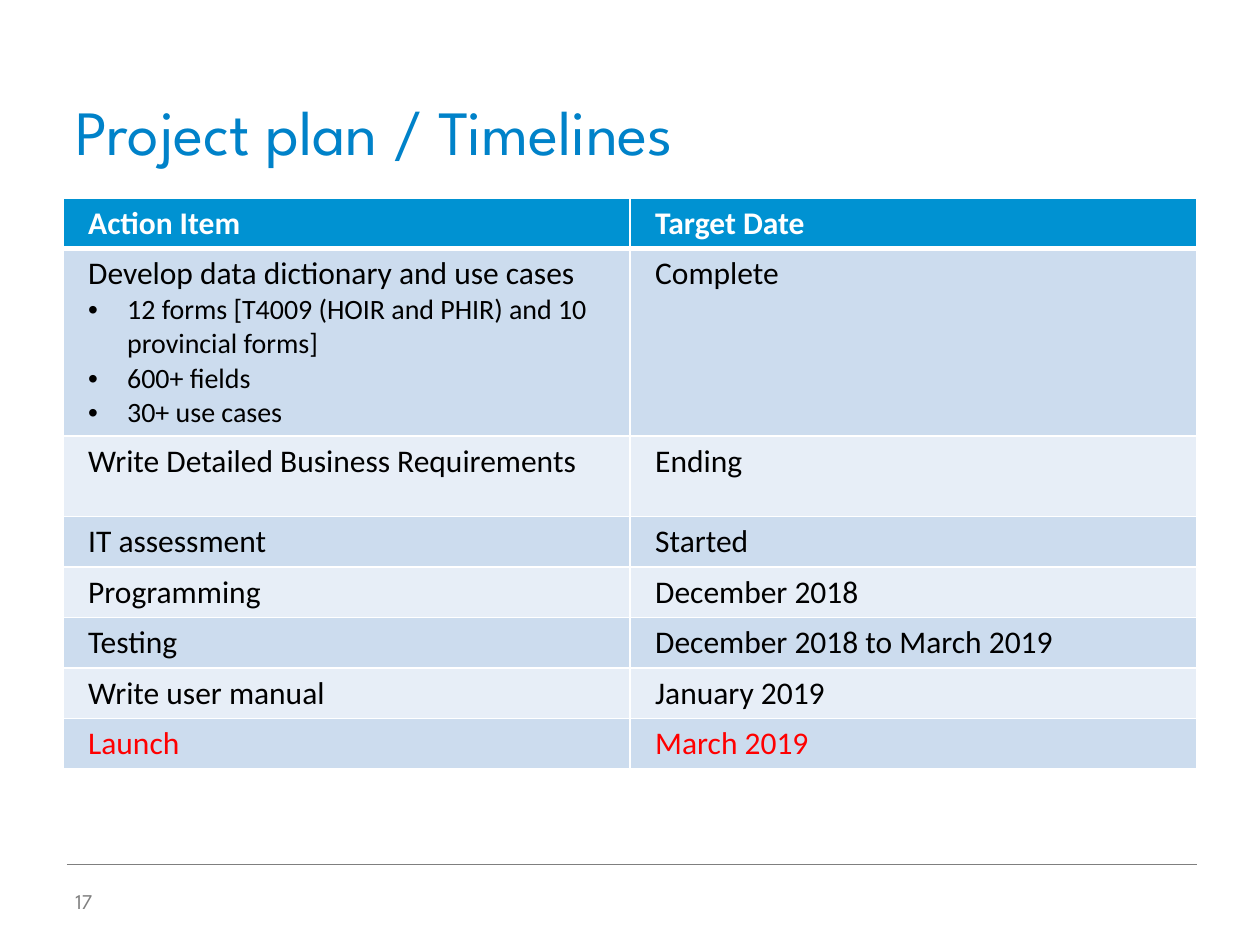
from dataclasses import dataclass

import pptx
import pptx.dml.color
import pptx.enum.shapes
import pptx.enum.text
import pptx.oxml.ns
import pptx.util
from lxml import etree

Inches = pptx.util.Inches
Pt = pptx.util.Pt
qn = pptx.oxml.ns.qn
Anchor = pptx.enum.text.MSO_ANCHOR

HEADING_FONT = "League Spartan"
BODY_FONT = "Calibri"
HEADER_FILL = "0092D2"
BAND_FILLS = ("CCDCEE", "E7EEF7")


@dataclass
class Action:
    item: str
    date: str
    height: float = 0.4
    bullets: tuple[str, ...] = ()
    color: str = "000000"


ACTIONS = [
    Action("Develop data dictionary and use cases", "Complete", 1.49,
           ("12 forms [T4009 (HOIR and PHIR) and 10 provincial forms]",
            "600+ fields", "30+ use cases")),
    Action("Write Detailed Business Requirements", "Ending", 0.64),
    Action("IT assessment", "Started"),
    Action("Programming", "December 2018"),
    Action("Testing", "December 2018 to March 2019"),
    Action("Write user manual", "January 2019"),
    Action("Launch", "March 2019", color="FF0000"),
]


def rgb(value: str) -> pptx.dml.color.RGBColor:
    return pptx.dml.color.RGBColor.from_string(value)


def add_run(p, text: str, font: str, size: float, color: str, bold: bool = False) -> None:
    r = p.add_run()
    r.text = text
    r.font.name = font
    r.font.size = Pt(size)
    r.font.bold = bold
    r.font.color.rgb = rgb(color)


def add_text(s, box: tuple[float, ...], text: str, size: float, color: str, anchor) -> None:
    tf = s.shapes.add_textbox(*map(Inches, box)).text_frame
    tf.word_wrap = True
    tf.vertical_anchor = anchor
    add_run(tf.paragraphs[0], text, HEADING_FONT, size, color)


def add_rule(s, left: float, right: float, top: float) -> None:
    sp = s.shapes.add_connector(pptx.enum.shapes.MSO_CONNECTOR.STRAIGHT,
                                Inches(left), Inches(top), Inches(right), Inches(top))
    sp.line.color.rgb = rgb("7F7F7F")
    sp.line.width = Pt(0.25)
    etree.SubElement(sp._element.spPr, qn("a:effectLst"))


def set_bullet(p) -> None:
    pPr = p._p.get_or_add_pPr()
    pPr.set("marL", str(Inches(0.31)))
    pPr.set("indent", str(-Inches(0.31)))
    etree.SubElement(pPr, qn("a:buFont"), typeface="Arial")
    etree.SubElement(pPr, qn("a:buChar"), char="•")


def style_cell(cell, fill: str, top: float = 1, bottom: float = 1) -> None:
    cell.margin_left = cell.margin_right = Inches(0.2)
    cell.margin_top = cell.margin_bottom = Inches(0.05)
    tcPr = cell._tc.get_or_add_tcPr()
    for side, width in (("L", 1), ("R", 1), ("T", top), ("B", bottom)):
        ln = etree.SubElement(tcPr, qn(f"a:ln{side}"), w=str(Pt(width)))
        solid = etree.SubElement(ln, qn("a:solidFill"))
        etree.SubElement(solid, qn("a:srgbClr"), val="FFFFFF")
    cell.fill.solid()
    cell.fill.fore_color.rgb = rgb(fill)


def add_plan(s, actions: list[Action]) -> None:
    height = 0.4 + sum(a.height for a in actions)
    table = s.shapes.add_table(len(actions) + 1, 2, Inches(0.5), Inches(1.57),
                               Inches(9), Inches(height)).table
    table.rows[0].height = Inches(0.4)
    for cell, heading in zip(table.rows[0].cells, ("Action Item", "Target Date")):
        style_cell(cell, HEADER_FILL, bottom=3)
        add_run(cell.text_frame.paragraphs[0], heading, BODY_FONT, 18, "FFFFFF", True)
    for i, action in enumerate(actions):
        row = table.rows[i + 1]
        row.height = Inches(action.height)
        for cell, text in zip(row.cells, (action.item, action.date)):
            style_cell(cell, BAND_FILLS[i % 2], top=1 if i else 3)
            add_run(cell.text_frame.paragraphs[0], text, BODY_FONT, 18, action.color)
        for bullet in action.bullets:
            p = row.cells[0].text_frame.add_paragraph()
            set_bullet(p)
            add_run(p, bullet, BODY_FONT, 16, action.color)


def main() -> None:
    prs = pptx.Presentation()
    prs.slide_width, prs.slide_height = Inches(10), Inches(7.5)
    s = prs.slides.add_slide(prs.slide_layouts[6])
    add_rule(s, 0.53, 9.5, 6.86)
    add_text(s, (0.5, 0.3, 9, 1.08), "Project plan / Timelines", 36, "0082C9", Anchor.BOTTOM)
    add_plan(s, ACTIONS)
    add_text(s, (0.5, 6.95, 1.07, 0.4), "17", 12, "7F7F7F", Anchor.MIDDLE)
    prs.save("out.pptx")


if __name__ == "__main__":
    main()
